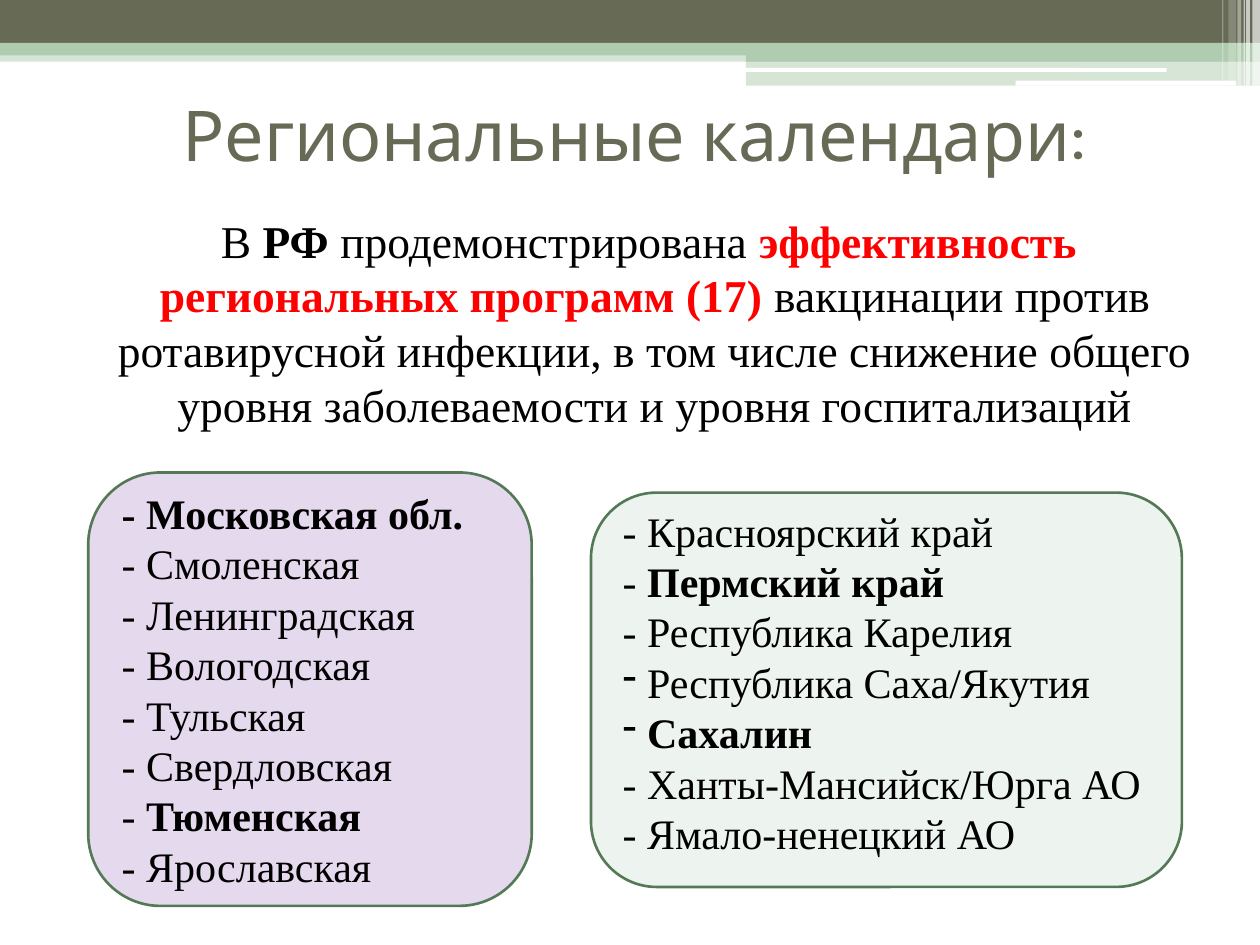
import pptx
import pptx.util
import pptx.dml.color
import pptx.enum.shapes
import pptx.enum.text
import pptx.oxml.ns
import lxml.etree

OLIVE, SAGE, WHITE, BLACK, RED = "676A55", "B0CCB0", "FFFFFF", "000000", "FF0000"
SERIF = "Times New Roman"
SHAPES = pptx.enum.shapes.MSO_SHAPE
ALIGN = pptx.enum.text.PP_ALIGN
ANCHOR = pptx.enum.text.MSO_ANCHOR


def color(value):
    return pptx.dml.color.RGBColor.from_string(value)


def add_child(parent, tag, **attributes):
    return lxml.etree.SubElement(parent, pptx.oxml.ns.qn(tag), **attributes)


class SlideBuilder:
    """Draws styled elements on one slide, with boxes in percent of its width and height."""

    def __init__(self, presentation):
        self.width = presentation.slide_width
        self.height = presentation.slide_height
        self.slide = presentation.slides.add_slide(presentation.slide_layouts[6])

    def place(self, box):
        left, top, width, height = box
        return [int(share * side / 100) for share, side in
                ((left, self.width), (top, self.height), (width, self.width), (height, self.height))]

    def block(self, box, fill, opacity=100, rounded=False, line=None):
        kind = SHAPES.ROUNDED_RECTANGLE if rounded else SHAPES.RECTANGLE
        shape = self.slide.shapes.add_shape(kind, *self.place(box))
        shape.shadow.inherit = False
        shape.fill.solid()
        shape.fill.fore_color.rgb = color(fill)
        if opacity < 100:
            tone = shape.fill._xPr.find(".//" + pptx.oxml.ns.qn("a:srgbClr"))
            add_child(tone, "a:alpha", val=str(opacity * 1000))
        if line:
            shape.line.color.rgb = color(line)
            shape.line.width = pptx.util.Pt(1.5)
        else:
            shape.line.fill.background()
        return shape

    def runs(self, paragraph, parts, size, font=SERIF):
        for text, bold, tone in parts:
            run = paragraph.add_run()
            run.text = text
            run.font.name = font
            run.font.size = pptx.util.Pt(size)
            run.font.bold = bold
            run.font.color.rgb = color(tone)

    def text(self, box, parts, size, font=SERIF, anchor=ANCHOR.TOP):
        frame = self.slide.shapes.add_textbox(*self.place(box)).text_frame
        frame.word_wrap = True
        frame.vertical_anchor = anchor
        paragraph = frame.paragraphs[0]
        paragraph.alignment = ALIGN.CENTER
        self.runs(paragraph, parts, size, font)
        return paragraph

    def card(self, box, fill, opacity, regions, bold=(), bulleted=(), bottom=0.05):
        frame = self.block(box, fill, opacity, rounded=True, line="547957").text_frame
        frame.word_wrap = True
        frame.vertical_anchor = ANCHOR.MIDDLE
        frame.margin_bottom = pptx.util.Inches(bottom)
        for index, region in enumerate(regions):
            paragraph = frame.paragraphs[0] if index == 0 else frame.add_paragraph()
            paragraph.alignment = ALIGN.LEFT
            dash = "- "
            if region in bulleted:
                add_child(paragraph._p.get_or_add_pPr(), "a:buChar", char="-")
                dash = " "
            bold_dash = index == 0 and region in bold
            self.runs(paragraph, [(dash, bold_dash, BLACK), (region, region in bold, BLACK)], 24)


def main():
    presentation = pptx.Presentation()
    presentation.slide_width = pptx.util.Inches(10)
    presentation.slide_height = pptx.util.Inches(7.5)
    builder = SlideBuilder(presentation)

    for box, fill, opacity in (
        ((0, 5.33, 100, 1.2), SAGE, 50),
        ((0, 0, 100, 4.53), OLIVE, 100),
        ((0, 4.53, 100, 1.33), SAGE, 100),
        ((59.2, 5.2, 40.8, 1.33), SAGE, 100),
        ((59.2, 6.4, 40.8, 2.67), SAGE, 50),
    ):
        builder.block(box, fill, opacity)
    for box in ((59.1, 7.2, 33.5, 0.4), (80.6, 8.53, 17.5, 0.53)):
        builder.block(box, WHITE, rounded=True)
    for left, width, height, opacity in (
        (99.4, 0.6, 9.07, 65), (98.9, 0.3, 9.07, 65), (98.7, 0.1, 9.07, 60),
        (98.2, 0.3, 9.07, 40), (97.5, 0.6, 8.53, 20), (97, 0.1, 8.53, 30),
    ):
        builder.block((left, 0, width, height), WHITE, opacity)

    builder.text((4.7, 7.33, 90, 13.6), [(" Региональные календари:", False, OLIVE)],
                 40, "Karla", ANCHOR.MIDDLE)
    summary = builder.text((3.1, 21.87, 93.8, 75.07), [
        ("В ", False, BLACK),
        ("РФ", True, BLACK),
        (" продемонстрирована ", False, BLACK),
        ("эффективность региональных программ (17)", True, RED),
        (" вакцинации против ротавирусной инфекции, в том числе снижение общего "
         "уровня заболеваемости и уровня госпитализаций", False, BLACK),
    ], 26)
    summary.space_before = pptx.util.Pt(3)
    properties = summary._p.get_or_add_pPr()
    properties.set("marL", str(pptx.util.Inches(0.4)))
    properties.set("indent", str(pptx.util.Inches(-0.1)))

    builder.card((46.9, 52.13, 46.9, 41.73), "72A376", 12, (
        "Красноярский край", "Пермский край", "Республика Карелия",
        "Республика Саха/Якутия", "Сахалин", "Ханты-Мансийск/Юрга АО",
        "Ямало-ненецкий АО",
    ), bold=("Пермский край", "Сахалин"),
        bulleted=("Республика Саха/Якутия", "Сахалин"), bottom=0.18)
    builder.card((7, 50, 35.2, 45.87), "7030A0", 18, (
        "Московская обл.", "Смоленская", "Ленинградская", "Вологодская",
        "Тульская", "Свердловская", "Тюменская", "Ярославская",
    ), bold=("Московская обл.", "Тюменская"))

    presentation.save("out.pptx")


if __name__ == "__main__":
    main()
